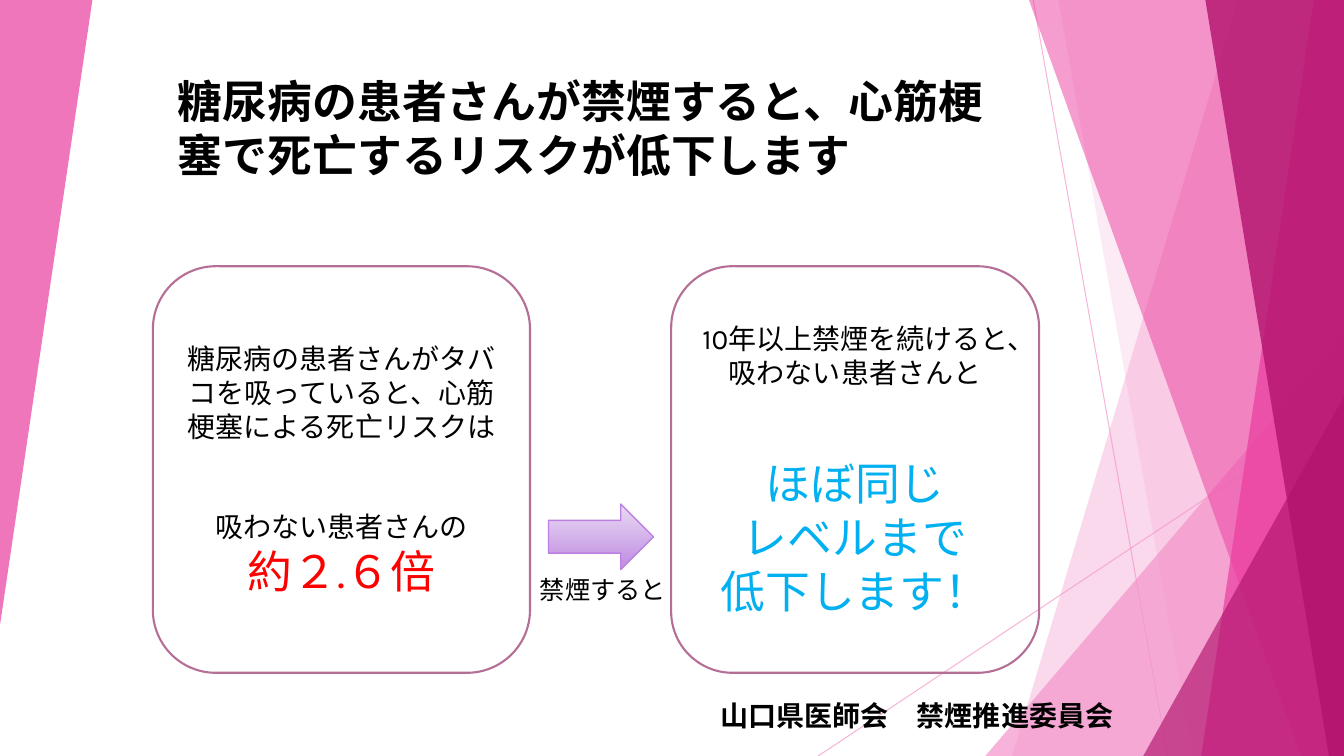
from lxml import etree
from pptx import Presentation
from pptx import util as u
from pptx.dml.color import RGBColor
from pptx.enum import shapes, text
from pptx.oxml.ns import qn

COLS, ROWS = 160, 90
UNIT = u.Inches(13.33) / COLS
FONT = "Karla"
KIND = shapes.MSO_SHAPE
LIGHT, PINK, DARK = "F496CB", "EB3D9F", "B2136D"


def rgb(value):
    return RGBColor.from_string(value)


def emu(*lengths):
    return [round(n * UNIT) for n in lengths]


def paint(fill, color, alpha=100):
    fill.solid()
    fill.fore_color.rgb = rgb(color)
    if alpha < 100:
        clr = next(fill._xPr.iter(qn("a:srgbClr")))
        etree.SubElement(clr, qn("a:alpha")).set("val", str(alpha * 1000))


def add_shape(slide, kind, box):
    sp = slide.shapes.add_shape(kind, *emu(*box))
    sp.shadow.inherit = False
    sp.fill.background()
    sp.line.fill.background()
    return sp


def write(tf, rows, align=None, bold=None):
    tf.word_wrap = True
    for i, (words, size, color, gap) in enumerate(rows):
        p = tf.paragraphs[0] if i == 0 else tf.add_paragraph()
        p.text = words
        p.alignment = align
        if gap:
            p.space_before = u.Pt(gap)
        font = p.runs[0].font
        font.name, font.size, font.bold = FONT, u.Pt(size), bold
        font.color.rgb = rgb(color)


def add_label(slide, box, words, size, bold=None, anchor=text.MSO_ANCHOR.TOP):
    tf = slide.shapes.add_textbox(*emu(*box)).text_frame
    tf.vertical_anchor = anchor
    write(tf, [(words, size, "000000", 0)], bold=bold)


def add_ray(slide, x1, y1, x2, y2):
    cx = slide.shapes.add_connector(shapes.MSO_CONNECTOR.STRAIGHT, *emu(x1, y1, x2, y2))
    paint(cx.line.fill, LIGHT, 70)
    cx.line.width = u.Pt(0.75)
    etree.SubElement(cx._element.spPr, qn("a:effectLst"))


def add_facet(slide, box, top, bottom, color, alpha):
    x, y, w, h = box
    points = [(x + top, y), (x + w, y), (x + w, y + h), (x + bottom, y + h)]
    corners = [emu(*point) for point in points]
    fb = slide.shapes.build_freeform(*corners[0])
    fb.add_line_segments(corners[1:], close=True)
    sp = fb.convert_to_shape()
    sp.shadow.inherit = False
    sp.line.fill.background()
    paint(sp.fill, color, alpha)


def add_wedge(slide, box, color, alpha, turn=0):
    sp = add_shape(slide, KIND.ISOSCELES_TRIANGLE, box)
    sp.adjustments[0] = 1
    sp.rotation = turn
    paint(sp.fill, color, alpha)


def add_corner_wedge(slide, box, w, h, color, alpha):
    add_wedge(slide, (box[0] + box[2] - w, box[1] + box[3] - h, w, h), color, alpha)


def add_backdrop(slide, box):
    x, y, w, h = box
    add_ray(slide, x + 123, y, x + 139, y + h)
    add_ray(slide, x + w, y + 48.4, x + 97.4, y + h)
    add_facet(slide, box, 147.4, 120.5, LIGHT, 36)
    add_facet(slide, box, 126, 142, LIGHT, 20)
    add_corner_wedge(slide, box, 42.7, 50, LIGHT, 72)
    add_facet(slide, box, 122.5, 154.9, PINK, 50)
    add_facet(slide, box, 156.4, 143, PINK, 70)
    add_facet(slide, box, 143.5, 158.2, DARK, 80)
    add_corner_wedge(slide, box, 23.9, 42.8, DARK, 66)
    add_wedge(slide, (x, y, 11, 74.4), PINK, 70, turn=180)


def add_card(slide, box, rows):
    sp = add_shape(slide, KIND.ROUNDED_RECTANGLE, box)
    sp.line.color.rgb = rgb("B56F96")
    sp.line.width = u.Pt(1.5)
    sp.text_frame.vertical_anchor = text.MSO_ANCHOR.MIDDLE
    write(sp.text_frame, rows, text.PP_ALIGN.CENTER)


def add_arrow(slide, box):
    sp = add_shape(slide, KIND.RIGHT_ARROW, box)
    sp.fill.gradient()
    sp.fill.gradient_angle = 270
    stops = zip(sp.fill.gradient_stops, [(0, "EADBF5"), (0.88, "C494E3")])
    for stop, (position, color) in stops:
        stop.position = position
        stop.color.rgb = rgb(color)
    sp.line.color.rgb = rgb("BC80E0")
    sp.line.width = u.Pt(1)


def add_comparison(slide, box):
    x, y, w, h = box
    left_w, right_w = 44.9, 43.8
    add_card(slide, (x, y, left_w, h), [
        ("糖尿病の患者さんがタバコを吸っていると、心筋梗塞による死亡リスクは", 20, "000000", 0),
        ("吸わない患者さんの", 20, "000000", 48),
        ("約２.６倍", 32, "FF0000", 0),
    ])
    add_arrow(slide, (x + left_w + 2.2, y + 28.3, 12.5, 7.8))
    add_label(slide, (x + left_w, y + 36.1, 25.3, 4.9), "禁煙すると", 18)
    add_card(slide, (x + w - right_w, y, right_w, h), [
        ("10年以上禁煙を続けると、吸わない患者さんと", 20, "000000", 0),
        ("ほぼ同じ", 32, "00B0F0", 48),
        ("レベルまで", 32, "00B0F0", 0),
        ("低下します！", 32, "00B0F0", 0),
    ])


def main():
    prs = Presentation()
    prs.slide_width, prs.slide_height = emu(COLS, ROWS)
    slide = prs.slides.add_slide(prs.slide_layouts[6])
    add_backdrop(slide, (0, 0, COLS, ROWS))
    add_label(slide, (84.6, 82.6, 50.5, 5.3), "山口県医師会　禁煙推進委員会", 20, True)
    add_label(slide, (20, 9.6, 101.9, 12.6),
              "糖尿病の患者さんが禁煙すると、心筋梗塞で死亡するリスクが低下します",
              32, True, text.MSO_ANCHOR.BOTTOM)
    add_comparison(slide, (18.2, 31.7, 105.5, 48.4))
    prs.save("out.pptx")


if __name__ == "__main__":
    main()
